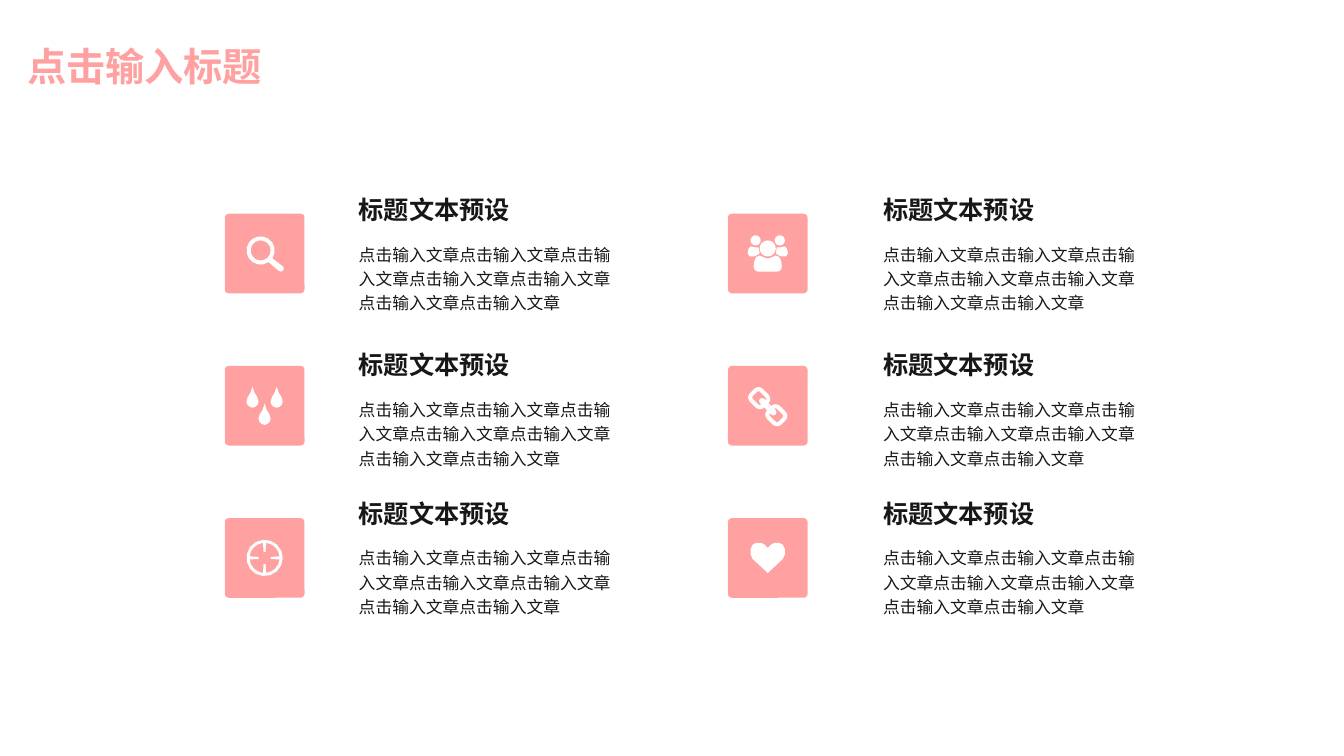
from dataclasses import dataclass
from itertools import product
from math import ceil, cos, radians, sin, sqrt

from pptx import Presentation
from pptx.dml.color import RGBColor
from pptx.enum.shapes import MSO_SHAPE
from pptx.enum.text import MSO_AUTO_SIZE
from pptx.shapes.autoshape import Shape
from pptx.shapes.shapetree import GroupShapes, SlideShapes
from pptx.util import Inches, Pt

ROUNDED = MSO_SHAPE.ROUNDED_RECTANGLE
GROW = MSO_AUTO_SIZE.SHAPE_TO_FIT_TEXT
FIXED = MSO_AUTO_SIZE.NONE

Point = tuple[float, float]
Contour = list[Point]
Icon = list[Contour]


@dataclass(frozen=True)
class Theme:
    font: str = "Calibri"
    accent: RGBColor = RGBColor(0xFF, 0xA1, 0xA1)
    ink: RGBColor = RGBColor(0x18, 0x17, 0x17)
    icon: RGBColor = RGBColor(0xFF, 0xFF, 0xFF)
    title_size: int = 28
    heading_size: int = 18
    body_size: int = 12


@dataclass(frozen=True)
class Column:
    tile_left: float
    text_left: float


@dataclass(frozen=True)
class Row:
    tile_top: float
    text_top: float


THEME = Theme()
TILE = 0.79
HEADING_HEIGHT = 0.46
COLUMNS = (Column(2.23, 3.46), Column(7.22, 8.66))
ROWS = (Row(2.12, 1.88), Row(3.63, 3.42), Row(5.14, 4.89))
TITLE = "点击输入标题"
HEADING = "标题文本预设"
BODY = "点击输入文章" * 7


def arc(x: float, y: float, radius: float, start: float, end: float) -> Contour:
    steps = ceil(abs(end - start) / (45 if radius < 0.05 else 24))
    angles = [radians(start + (end - start) * i / steps) for i in range(steps + 1)]
    return [(x + radius * cos(a), y + radius * sin(a)) for a in angles]


def circle(x: float, y: float, radius: float) -> Contour:
    return arc(x, y, radius, 0, 360)


def curve(*controls: Point) -> Contour:
    steps = 3
    points = [controls[0]]
    for i in range(0, len(controls) - 1, 3):
        a, b, c, d = controls[i:i + 4]
        for t in (step / steps for step in range(1, steps + 1)):
            weights = ((1 - t) ** 3, 3 * t * (1 - t) ** 2, 3 * t * t * (1 - t), t ** 3)
            points.append((sum(w * p[0] for w, p in zip(weights, (a, b, c, d))),
                           sum(w * p[1] for w, p in zip(weights, (a, b, c, d)))))
    return points


def mirrored(contour: Contour) -> Contour:
    return [(-x, y) for x, y in reversed(contour)]


def symmetric(half: Contour) -> Contour:
    return half + mirrored(half)


def magnifier() -> Icon:
    outline = arc(-0.04, -0.03, 0.14, 56, 394) + arc(0.16, 0.15, 0.03, -45, 135)
    return [outline, circle(-0.04, -0.03, 0.1)]


def drops() -> Icon:
    side = curve((0, 0), (-0.01, 0.08), (-0.06, 0.09), (-0.06, 0.15),
                 (-0.06, 0.18), (-0.03, 0.21), (0, 0.21))
    drop = symmetric(side)
    tips = ((-0.12, -0.19), (0, -0.02), (0.12, -0.19))
    return [[(x + left, y + top) for x, y in drop] for left, top in tips]


def crosshair() -> Icon:
    quarter = arc(0, 0, 0.15, 6, 84) + [(0.01, 0.06), (-0.01, 0.06)]
    inner: Contour = []
    for _ in range(4):
        inner += quarter
        quarter = [(-y, x) for x, y in quarter]
    return [circle(0, 0, 0.18), inner]


def people() -> Icon:
    shoulder = [(-0.17, -0.07), (-0.19, -0.05), (-0.2, 0), (-0.18, 0.03),
                (-0.13, 0.03), (-0.08, 0), (-0.09, -0.06), (-0.12, -0.06)]
    torso = symmetric(curve((0, 0.05), (-0.03, 0.05), (-0.05, 0.03), (-0.08, 0.02),
                            (-0.12, 0.02), (-0.14, 0.07), (-0.14, 0.13),
                            (-0.14, 0.16), (-0.12, 0.18), (-0.09, 0.18)))
    return [circle(-0.12, -0.13, 0.05), circle(0.12, -0.13, 0.05),
            circle(0, -0.05, 0.08), shoulder, mirrored(shoulder), torso]


def link_corners(radius: float) -> Contour:
    centers = ((-0.08, 0.03), (-0.16, 0.03), (-0.16, -0.03), (-0.08, -0.03))
    return [point for i, (x, y) in enumerate(centers)
            for point in arc(x, y, radius, 90 * i, 90 * i + 90)]


def chain() -> Icon:
    outer = link_corners(0.06)
    hole = link_corners(0.02) + arc(-0.08, 0, 0.03, 270, 90)
    far_outer, far_hole = ([(-u, -v) for u, v in half] for half in (outer, hole))
    return [[((u - v) / sqrt(2), (u + v) / sqrt(2) + 0.01) for u, v in contour]
            for contour in (outer + far_outer, hole, far_hole)]


def heart() -> Icon:
    side = curve((0, -0.1), (-0.01, -0.11), (-0.02, -0.12), (-0.03, -0.13),
                 (-0.06, -0.16), (-0.12, -0.16), (-0.15, -0.13),
                 (-0.18, -0.09), (-0.18, -0.03), (-0.15, 0.01))
    return [symmetric(side + [(0, 0.15)])]


def paint(shape: Shape, color: RGBColor) -> None:
    shape.shadow.inherit = False
    shape.fill.solid()
    shape.fill.fore_color.rgb = color
    shape.line.fill.background()


def draw_icon(shapes: GroupShapes, icon: Icon, x: float, y: float) -> None:
    placed = [[(Inches(x + dx), Inches(y + dy)) for dx, dy in contour] for contour in icon]
    outline = shapes.build_freeform(*placed[0][0])
    outline.add_line_segments(placed[0][1:])
    for contour in placed[1:]:
        outline.move_to(*contour[0])
        outline.add_line_segments(contour[1:])
    paint(outline.convert_to_shape(), THEME.icon)


def draw_tile(shapes: SlideShapes, icon: Icon, left: float, top: float) -> None:
    group = shapes.add_group_shape().shapes
    tile = group.add_shape(ROUNDED, Inches(left), Inches(top), Inches(TILE), Inches(TILE))
    tile.adjustments[0] = 0.05
    paint(tile, THEME.accent)
    draw_icon(group, icon, left + TILE / 2, top + TILE / 2)


def add_text(shapes: SlideShapes, text: str, left: float, top: float, width: float,
             height: float, *, size: int, color: RGBColor = THEME.ink, bold: bool = False,
             wrap: bool = False, grow: bool = False, spacing: float | None = None) -> None:
    box = shapes.add_textbox(Inches(left), Inches(top), Inches(width), Inches(height))
    frame = box.text_frame
    frame.word_wrap = wrap
    frame.auto_size = GROW if grow else FIXED
    paragraph = frame.paragraphs[0]
    paragraph.line_spacing = spacing
    run = paragraph.add_run()
    run.text = text
    run.font.name = THEME.font
    run.font.size = Pt(size)
    run.font.bold = bold
    run.font.color.rgb = color


def main() -> None:
    deck = Presentation()
    deck.slide_width, deck.slide_height = Inches(13.33), Inches(7.5)
    shapes = deck.slides.add_slide(deck.slide_layouts[6]).shapes
    icons = (magnifier(), drops(), crosshair(), people(), chain(), heart())
    for (column, row), icon in zip(product(COLUMNS, ROWS), icons):
        draw_tile(shapes, icon, column.tile_left, row.tile_top)
        add_text(shapes, BODY, column.text_left, row.text_top + HEADING_HEIGHT, 2.8, 0.73,
                 size=THEME.body_size, wrap=True, spacing=1.2)
        add_text(shapes, HEADING, column.text_left, row.text_top, 2.87, HEADING_HEIGHT,
                 size=THEME.heading_size, bold=True)
    add_text(shapes, TITLE, 0.17, 0.37, 2.56, 0.57, size=THEME.title_size,
             color=THEME.accent, bold=True, grow=True)
    deck.save("out.pptx")


if __name__ == "__main__":
    main()
